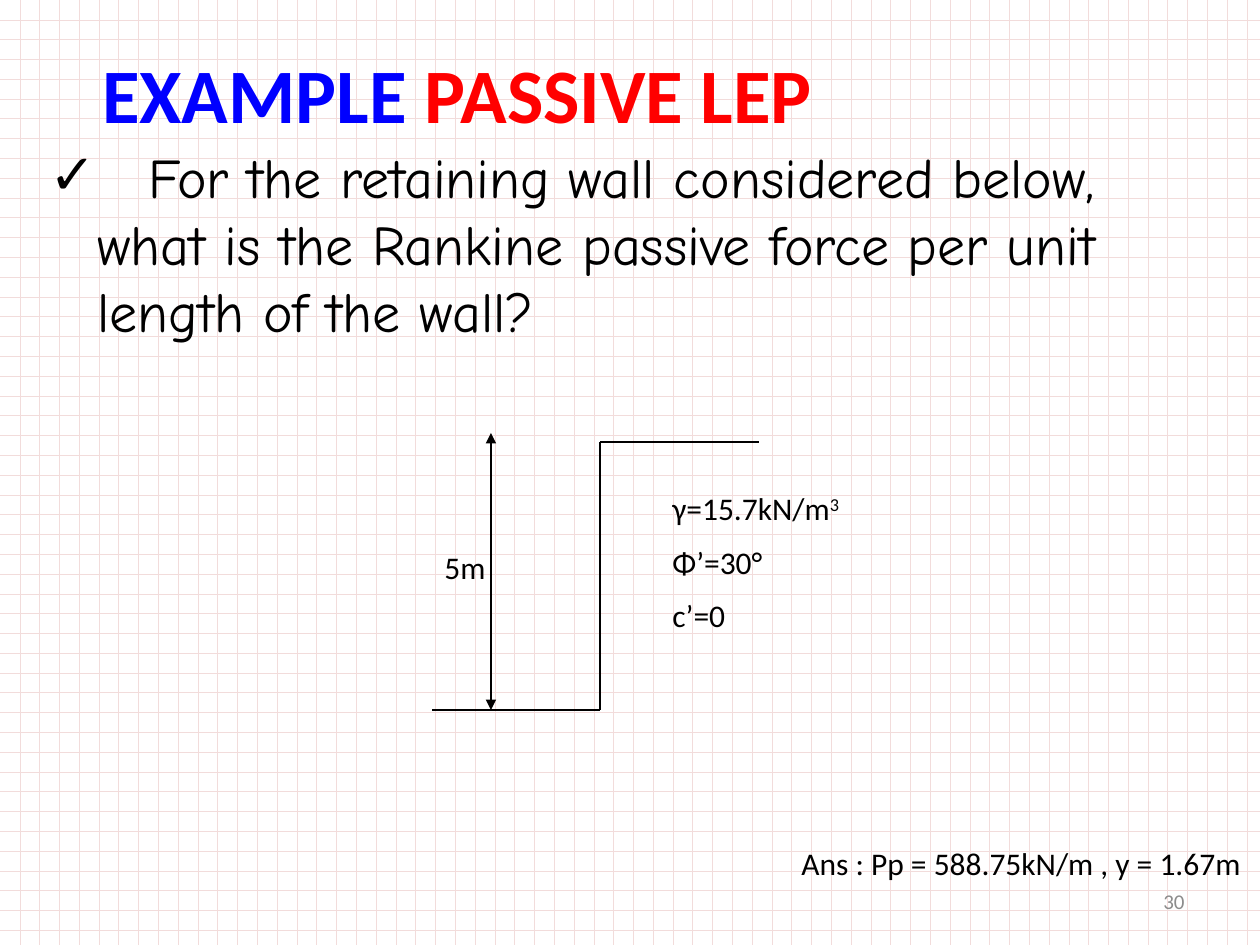
from lxml.etree import SubElement
from pptx import Presentation
from pptx.dml.color import RGBColor
from pptx.enum.dml import MSO_PATTERN
from pptx.enum.shapes import MSO_CONNECTOR
from pptx.enum.text import MSO_ANCHOR, PP_ALIGN
from pptx.oxml.ns import qn
from pptx.util import Emu, Pt

PX = 914400 // 126  # EMU per px

THEME = {
    "font": "Calibri", "body_font": "Comic Neue",
    "black": "000000", "blue": "0000FF", "red": "FF0000", "grey": "8C8C8C",
    "grid": "F2DCDB", "paper": "FFFFFF",
    "title": 44, "body": 32, "label": 18, "number": 12, "line": 0.75,
}

# Content
TITLE = [("EXAMPLE ", "blue"), ("PASSIVE LEP", "red")]
QUESTION = ("For the retaining wall considered below, what is the Rankine "
            "passive force per unit length of the wall?")
HEIGHT = "5m"
SOIL = [("γ=15.7kN/m", "3"), ("Φ’=30°", ""), ("c’=0", "")]
ANSWER = "Ans : Pp = 588.75kN/m , y = 1.67m"
NUMBER = "30"

# Wall outline, in px
WALL_X, TOP, BASE = 600, 442, 710
WALL = [(759, TOP), (WALL_X, TOP), (WALL_X, BASE), (432, BASE)]
DIMENSION = [(491, 433), (491, BASE)]


def px(*values):
    return [Emu(v * PX) for v in values]


def rgb(name):
    return RGBColor.from_string(THEME[name])


def add_run(p, text, size, color="black", font="font", bold=False):
    r = p.add_run()
    r.text = text
    r.font.size, r.font.name, r.font.bold = Pt(THEME[size]), THEME[font], bold
    r.font.color.rgb = rgb(color)
    return r


def add_box(slide, *box, wrap=True):
    tf = slide.shapes.add_textbox(*px(*box)).text_frame
    tf.word_wrap = wrap
    return tf


def add_line(slide, start, end, arrows=False):
    line = slide.shapes.add_connector(MSO_CONNECTOR.STRAIGHT, *px(*start, *end))
    line.line.color.rgb = rgb("black")
    line.line.width = Pt(THEME["line"])
    sp_pr = line._element.spPr
    if arrows:
        for tag in ("a:headEnd", "a:tailEnd"):
            SubElement(sp_pr.find(qn("a:ln")), qn(tag), type="triangle")
    SubElement(sp_pr, qn("a:effectLst"))


def add_title(slide):
    title = slide.shapes.title
    title.left, title.top, title.width, title.height = px(54, 38, 1134, 110)
    tf = title.text_frame
    tf.vertical_anchor = MSO_ANCHOR.MIDDLE
    tf.margin_left = px(48)[0]
    p = tf.paragraphs[0]
    p.alignment = PP_ALIGN.LEFT
    for text, color in TITLE:
        add_run(p, text, "title", color, bold=True)


def add_question(slide):
    p = add_box(slide, 37, 136, 1178, 725).paragraphs[0]
    p.space_before = Pt(6.4)
    p_pr = p._p.get_or_add_pPr()
    indent = px(48)[0]
    p_pr.set("marL", str(indent))
    p_pr.set("indent", str(-indent))
    SubElement(p_pr, qn("a:buFont"), typeface=THEME["font"])
    SubElement(p_pr, qn("a:buChar"), char="✓")
    # One widened space sets the first line in
    gap = add_run(p, " ", "body")
    gap.font._element.set("spc", "2170")
    add_run(p, QUESTION, "body", font="body_font")


def main():
    prs = Presentation()
    prs.slide_width, prs.slide_height = px(1260, 945)
    slide = prs.slides.add_slide(prs.slide_layouts[5])

    # Grid paper background
    fill = slide.background.fill
    fill.patterned()
    fill.pattern = MSO_PATTERN.DOTTED_GRID
    fill.fore_color.rgb, fill.back_color.rgb = rgb("grid"), rgb("paper")

    add_title(slide)
    add_question(slide)

    # Wall and its height
    for start, end in zip(WALL, WALL[1:]):
        add_line(slide, start, end)
    add_line(slide, *DIMENSION, arrows=True)
    p = add_box(slide, 432, 542, 90, 50).paragraphs[0]
    p.space_before = Pt(9)
    add_run(p, HEIGHT, "label")

    # Soil values
    tf = add_box(slide, 660, 483, 407, 165)
    for i, (text, power) in enumerate(SOIL):
        p = tf.add_paragraph() if i else tf.paragraphs[0]
        p.space_before = Pt(9)
        add_run(p, text, "label")
        if power:
            add_run(p, power, "label").font._element.set("baseline", "30000")

    # Answer and slide number
    tf = add_box(slide, 789, 838, 472, 50, wrap=False)
    add_run(tf.paragraphs[0], ANSWER, "label")
    tf = add_box(slide, 903, 876, 294, 50)
    tf.vertical_anchor = MSO_ANCHOR.MIDDLE
    tf.paragraphs[0].alignment = PP_ALIGN.RIGHT
    add_run(tf.paragraphs[0], NUMBER, "number", "grey")

    prs.save("out.pptx")


if __name__ == "__main__":
    main()
